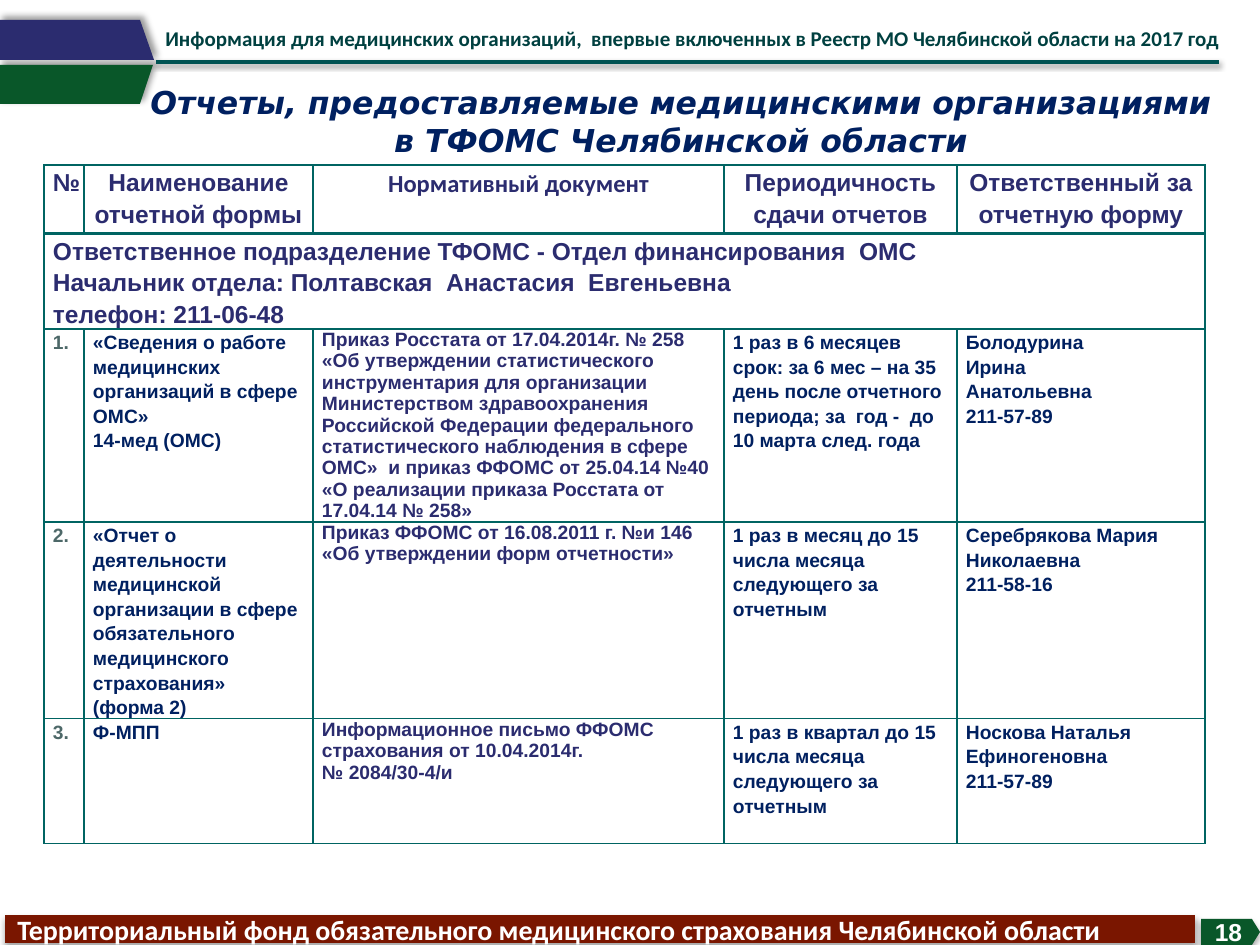
import pptx
import pptx.dml.color
import pptx.enum.shapes
import pptx.enum.text
import pptx.oxml
import pptx.oxml.ns
import pptx.util
from lxml import etree

SCALE = 914400 / 126
NAVY, VIOLET, GREEN, TEAL, GREY = "002060", "2B2C6F", "095729", "006462", "4D6868"
ALIGN = pptx.enum.text.PP_ALIGN
ANCHOR = pptx.enum.text.MSO_ANCHOR

COLUMNS = [40, 229, 411, 233, 248]
ROWS = [69, 66, 188, 125, 125]
HEADINGS = ["№", "Наименование отчетной формы", "Нормативный документ",
            "Периодичность сдачи отчетов", "Ответственный за отчетную форму"]
DEPARTMENT = ("Ответственное подразделение ТФОМС - Отдел финансирования  ОМС\n"
              "Начальник отдела: Полтавская  Анастасия  Евгеньевна\n"
              "телефон: 211-06-48")
REPORTS = [
    ["1.",
     "«Сведения о работе медицинских организаций в сфере ОМС»\n14-мед (ОМС)",
     "Приказ Росстата от 17.04.2014г. № 258 «Об утверждении статистического "
     "инструментария для организации Министерством здравоохранения Российской "
     "Федерации федерального статистического наблюдения в сфере ОМС»  и приказ "
     "ФФОМС от 25.04.14 №40 «О реализации приказа Росстата от 17.04.14 № 258»",
     "1 раз в 6 месяцев  срок: за 6 мес – на 35 день после отчетного периода; "
     "за  год -  до 10 марта след. года",
     "Болодурина\nИрина\nАнатольевна\n211-57-89"],
    ["2.",
     "«Отчет о деятельности медицинской организации в сфере обязательного "
     "медицинского страхования»  (форма 2)",
     "Приказ ФФОМС от 16.08.2011 г. №и 146 «Об утверждении форм отчетности»",
     "1 раз в месяц до 15 числа месяца следующего за отчетным",
     "Серебрякова Мария Николаевна\n211-58-16"],
    ["3.",
     "Ф-МПП",
     "Информационное письмо ФФОМС страхования от 10.04.2014г.\n№ 2084/30-4/и",
     "1 раз в квартал до 15 числа месяца следующего за отчетным",
     "Носкова Наталья Ефиногеновна\n211-57-89"],
]


def px(n):
    return pptx.util.Emu(round(n * SCALE))


def rgb(value):
    return pptx.dml.color.RGBColor.from_string(value)


def write(tf, text, size=11, font="Arial", color=NAVY, italic=False,
          align=ALIGN.LEFT, spacing=None, anchor=ANCHOR.TOP):
    """Fill a text frame with bold text, one paragraph per line of text."""
    tf.word_wrap = True
    tf.vertical_anchor = anchor
    for i, line in enumerate(text.split("\n")):
        p = tf.add_paragraph() if i else tf.paragraphs[0]
        p.alignment = align
        p.line_spacing = spacing
        r = p.add_run()
        r.text = line
        r.font.size = pptx.util.Pt(size)
        r.font.name = font
        r.font.bold = True
        r.font.italic = italic
        r.font.color.rgb = rgb(color)


def add_shadow(sp, alpha, blur, dist, angle):
    spPr = sp._element.spPr
    for old in spPr.findall(pptx.oxml.ns.qn("a:effectLst")):
        spPr.remove(old)
    spPr.append(pptx.oxml.parse_xml(
        f'<a:effectLst {pptx.oxml.ns.nsdecls("a")}>'
        f'<a:outerShdw blurRad="{round(blur * 12700)}" dist="{round(dist * 12700)}" '
        f'dir="{angle * 60000}" algn="ctr" rotWithShape="0"><a:srgbClr val="000000">'
        f'<a:alpha val="{alpha * 1000}"/></a:srgbClr></a:outerShdw></a:effectLst>'))


def set_borders(cell, top, bottom):
    """Draw teal cell borders; top and bottom widths are in points."""
    tcPr = cell._tc.get_or_add_tcPr()
    widths = {"lnL": 1, "lnR": 1, "lnT": top, "lnB": bottom}
    for i, (side, width) in enumerate(widths.items()):
        ln = etree.Element(pptx.oxml.ns.qn("a:" + side), w=str(width * 12700))
        fill = etree.SubElement(ln, pptx.oxml.ns.qn("a:solidFill"))
        etree.SubElement(fill, pptx.oxml.ns.qn("a:srgbClr"), val=TEAL)
        tcPr.insert(i, ln)


class SlideBuilder:
    def __init__(self, prs):
        self.s = prs.slides.add_slide(prs.slide_layouts[5])

    def title(self, x, y, w, h, text, **fmt):
        sp = self.s.shapes.title
        sp.left, sp.top, sp.width, sp.height = map(px, (x, y, w, h))
        write(sp.text_frame, text, **fmt)

    def text(self, x, y, w, h, text, **fmt):
        sp = self.s.shapes.add_textbox(*map(px, (x, y, w, h)))
        write(sp.text_frame, text, **fmt)

    def finish(self, sp, fill, shadow):
        sp.fill.solid()
        sp.fill.fore_color.rgb = rgb(fill)
        sp.line.fill.background()
        add_shadow(sp, *shadow)
        return sp

    def polygon(self, points, fill, shadow):
        builder = self.s.shapes.build_freeform(*points[0], scale=SCALE)
        builder.add_line_segments(points[1:], close=True)
        return self.finish(builder.convert_to_shape(), fill, shadow)

    def pentagon(self, x, y, w, h, fill, shadow):
        sp = self.s.shapes.add_shape(
            pptx.enum.shapes.MSO_SHAPE.PENTAGON, *map(px, (x, y, w, h)))
        sp.adjustments[0] = 0.31
        return self.finish(sp, fill, shadow)

    def line(self, x1, y1, x2, y2, color, width, shadow):
        sp = self.s.shapes.add_connector(
            pptx.enum.shapes.MSO_CONNECTOR.STRAIGHT, *map(px, (x1, y1, x2, y2)))
        sp.line.color.rgb = rgb(color)
        sp.line.width = pptx.util.Pt(width)
        add_shadow(sp, *shadow)

    def table(self, x, y, columns, rows):
        frame = self.s.shapes.add_table(
            len(rows), len(columns), *map(px, (x, y, sum(columns), sum(rows))))
        table = frame.table
        table.first_row = table.horz_banding = False
        for column, w in zip(table.columns, columns):
            column.width = px(w)
        for i, h in enumerate(rows):
            table.rows[i].height = px(h)
            for cell in table.rows[i].cells:
                cell.margin_left = cell.margin_right = px(9)
                cell.margin_top = cell.margin_bottom = 0
                cell.fill.background()
                set_borders(cell, 2 if i == 1 else 1, 2 if i == 0 else 1)
        return table


def fill_reports(table):
    for i, heading in enumerate(HEADINGS):
        write(table.cell(0, i).text_frame, heading, size=14, color=VIOLET,
              font="Calibri" if i == 2 else "Arial", align=ALIGN.CENTER, spacing=1.15)
    table.cell(1, 0).merge(table.cell(1, len(HEADINGS) - 1))
    write(table.cell(1, 0).text_frame, DEPARTMENT, size=14, color=VIOLET, spacing=1.15)
    colors = [GREY, NAVY, VIOLET, NAVY, NAVY]
    for row, report in enumerate(REPORTS, start=2):
        for i, (text, color) in enumerate(zip(report, colors)):
            write(table.cell(row, i).text_frame, text, color=color,
                  spacing=None if i == 2 else 1.15)


def main():
    prs = pptx.Presentation()
    prs.slide_width, prs.slide_height = px(1260), px(945)
    b = SlideBuilder(prs)
    b.title(134, 66, 1094, 110,
            "Отчеты, предоставляемые медицинскими организациями "
            "в ТФОМС Челябинской области",
            size=18, font="DejaVu Sans", italic=True, align=ALIGN.CENTER,
            anchor=ANCHOR.MIDDLE)
    fill_reports(b.table(44, 165, COLUMNS, ROWS))

    flag_shadow = (40, 4, 3, 315)
    b.polygon([(153, 65), (140, 104), (-1, 104), (-1, 65)], GREEN, flag_shadow)
    b.polygon([(154, 60), (140, 20), (-1, 20), (-1, 60)], VIOLET, flag_shadow)
    b.line(156, 62, 1219, 62, "005353", 2, (38, 3.1, 1.6, 90))
    b.text(153, 19, 1107, 77,
           "Информация для медицинских организаций,  впервые включенных "
           "в Реестр МО Челябинской области на 2017 год",
           size=12, font="Calibri", color="004040")

    footer_shadow = (32, 3.5, 2.2, 90)
    bar = b.polygon([(5, 915), (1195, 915), (1195, 943), (5, 943)],
                    "7A1600", footer_shadow)
    write(bar.text_frame,
          "Территориальный фонд обязательного медицинского страхования "
          "Челябинской области",
          size=16, font="Calibri", color="FFFFFF", anchor=ANCHOR.MIDDLE)
    number = b.pentagon(1201, 919, 59, 26, GREEN, footer_shadow)
    write(number.text_frame, "18", size=14, color="FFFFFF", align=ALIGN.CENTER,
          anchor=ANCHOR.MIDDLE)
    prs.save("out.pptx")


if __name__ == "__main__":
    main()
